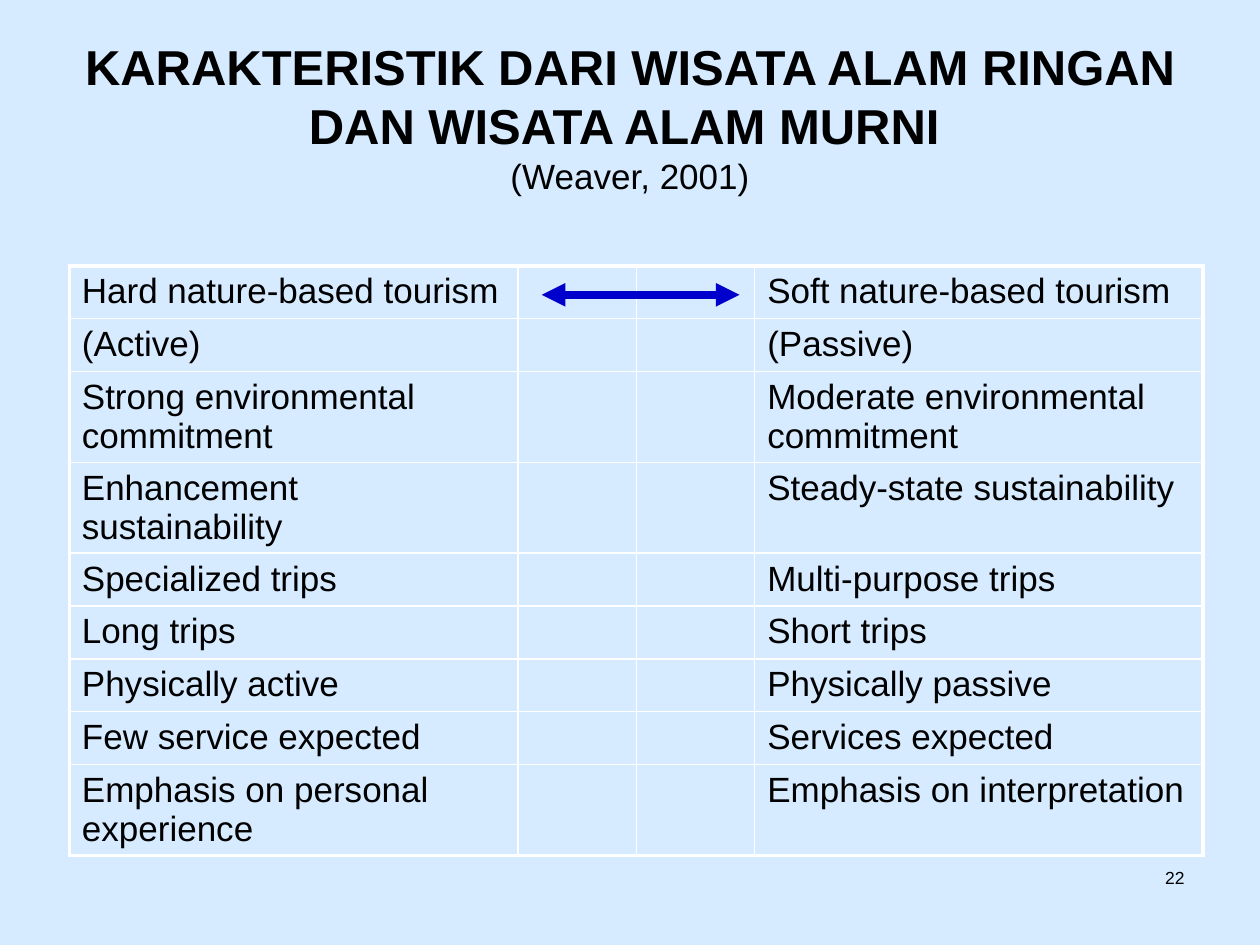
from lxml.etree import SubElement
from pptx import Presentation
from pptx.dml.color import RGBColor
from pptx.enum.shapes import MSO_CONNECTOR
from pptx.enum.text import MSO_ANCHOR, MSO_AUTO_SIZE, PP_ALIGN
from pptx.oxml.ns import qn
from pptx.util import Inches, Pt

COLORS = {"background": "D6EBFF", "text": "000000", "border": "FFFFFF", "arrow": "0000CC"}
FONT = "Arial"
TITLE = "KARAKTERISTIK DARI WISATA ALAM RINGAN DAN WISATA ALAM MURNI"
SOURCE = "(Weaver, 2001)"
PAGE_NUMBER = "22"

# Hard tourism, soft tourism, lines of text in the row
ROWS = [
    ("Hard nature-based tourism", "Soft nature-based tourism", 1),
    ("(Active)", "(Passive)", 1),
    ("Strong environmental commitment", "Moderate environmental commitment", 2),
    ("Enhancement sustainability", "Steady-state sustainability", 2),
    ("Specialized trips", "Multi-purpose trips", 1),
    ("Long trips", "Short trips", 1),
    ("Physically active", "Physically passive", 1),
    ("Few service expected", "Services expected", 1),
    ("Emphasis on personal experience", "Emphasis on interpretation", 2),
]
COLUMN_WIDTHS = [3.56, 0.94, 0.94, 3.56]
ROW_HEIGHTS = {1: 0.42, 2: 0.56}  # minimum heights, two-line rows grow to fit
TABLE_HEIGHT = 4.9
OUTER_BORDER, INNER_BORDER = 2.25, 1


def add_run(paragraph, text, size, bold=False):
    run = paragraph.add_run()
    run.text = text
    run.font.name = FONT
    run.font.size = Pt(size)
    run.font.bold = bold
    run.font.color.rgb = RGBColor.from_string(COLORS["text"])


def set_borders(cell, widths):
    properties = cell._tc.get_or_add_tcPr()
    for index, (side, width) in enumerate(widths.items()):
        line = SubElement(properties, qn(f"a:ln{side}"), w=str(Pt(width)))
        fill = SubElement(line, qn("a:solidFill"))
        SubElement(fill, qn("a:srgbClr"), val=COLORS["border"])
        properties.insert(index, line)


def add_title(slide):
    title = slide.shapes.title
    title.left, title.top = Inches(0.5), Inches(0.3)
    title.width, title.height = Inches(9), Inches(1.25)
    frame = title.text_frame
    frame.word_wrap = True
    frame.auto_size = MSO_AUTO_SIZE.NONE
    frame.vertical_anchor = MSO_ANCHOR.MIDDLE
    paragraph = frame.paragraphs[0]
    paragraph.alignment = PP_ALIGN.CENTER
    add_run(paragraph, TITLE, 28, bold=True)
    add_run(paragraph, " ", 24)
    paragraph.add_line_break()
    add_run(paragraph, SOURCE, 20)


def add_comparison(slide):
    last_row, last_column = len(ROWS) - 1, len(COLUMN_WIDTHS) - 1
    shape = slide.shapes.add_table(
        len(ROWS), len(COLUMN_WIDTHS), Inches(0.55), Inches(2.11),
        Inches(sum(COLUMN_WIDTHS)), Inches(TABLE_HEIGHT))
    table = shape.table
    table.first_row = table.horz_banding = False
    for column, width in zip(table.columns, COLUMN_WIDTHS):
        column.width = Inches(width)
    for r, (hard, soft, lines) in enumerate(ROWS):
        table.rows[r].height = Inches(ROW_HEIGHTS[lines])
        for c, text in enumerate((hard, "", "", soft)):
            cell = table.cell(r, c)
            cell.fill.background()
            edges = {"L": c == 0, "R": c == last_column, "T": r == 0, "B": r == last_row}
            set_borders(cell, {side: OUTER_BORDER if outer else INNER_BORDER
                               for side, outer in edges.items()})
            if text:
                add_run(cell.text_frame.paragraphs[0], text, 20)
    # Row heights reset the frame, so its height comes last
    shape.height = Inches(TABLE_HEIGHT)


def add_double_arrow(slide):
    arrow = slide.shapes.add_connector(
        MSO_CONNECTOR.STRAIGHT, Inches(4.3), Inches(2.34), Inches(5.87), Inches(2.34))
    arrow.line.color.rgb = RGBColor.from_string(COLORS["arrow"])
    arrow.line.width = Pt(4.5)
    line = arrow.line._get_or_add_ln()
    for end in ("headEnd", "tailEnd"):
        SubElement(line, qn(f"a:{end}"), type="triangle")
    SubElement(arrow._element.spPr, qn("a:effectLst"))


def add_page_number(slide):
    box = slide.shapes.add_textbox(Inches(7.17), Inches(6.83), Inches(2.33), Inches(0.5))
    box.text_frame.word_wrap = True
    paragraph = box.text_frame.paragraphs[0]
    paragraph.alignment = PP_ALIGN.RIGHT
    add_run(paragraph, PAGE_NUMBER, 10)


def main():
    presentation = Presentation()
    presentation.slide_width, presentation.slide_height = Inches(10), Inches(7.5)
    slide = presentation.slides.add_slide(presentation.slide_layouts[5])
    slide.background.fill.solid()
    slide.background.fill.fore_color.rgb = RGBColor.from_string(COLORS["background"])
    add_title(slide)
    add_comparison(slide)
    add_double_arrow(slide)
    add_page_number(slide)
    presentation.save("out.pptx")


if __name__ == "__main__":
    main()
